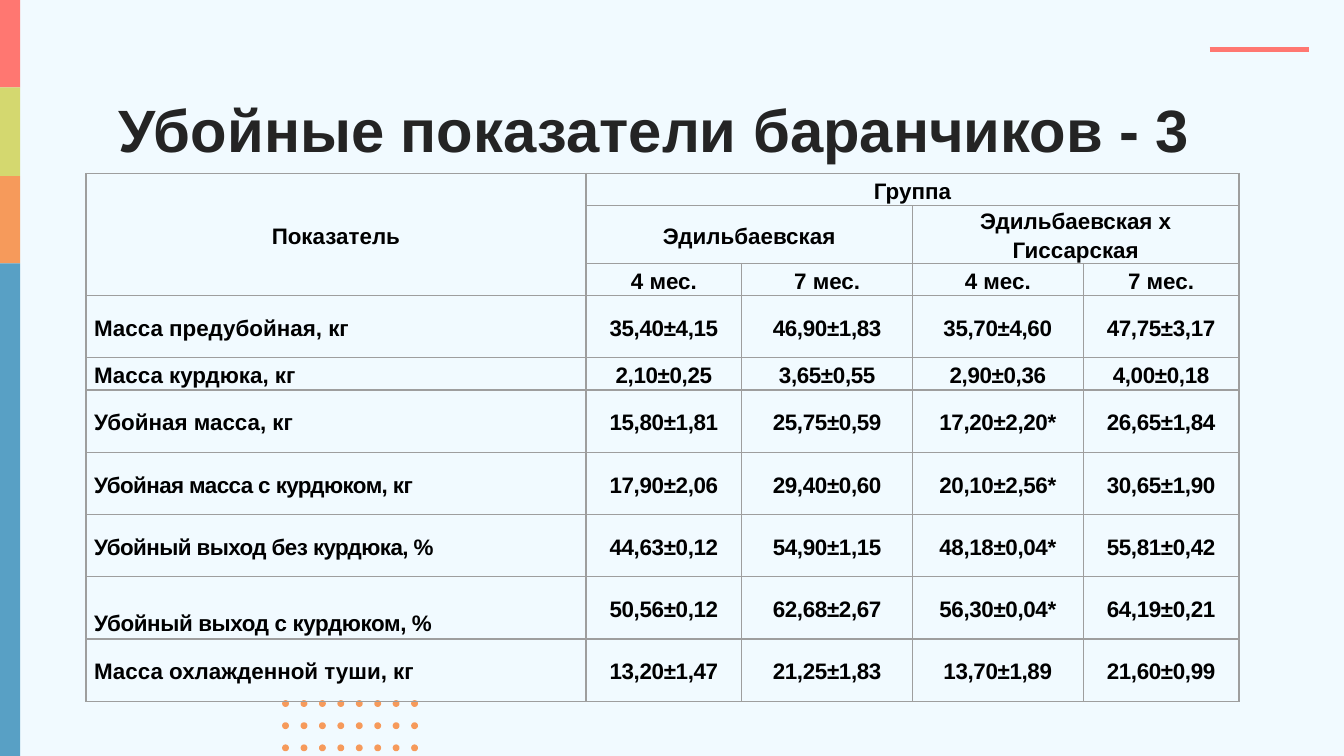
from lxml import etree
from pptx import Presentation
from pptx.dml.color import RGBColor
from pptx.enum.shapes import MSO_CONNECTOR, MSO_SHAPE
from pptx.enum.text import MSO_ANCHOR, MSO_AUTO_SIZE, PP_ALIGN
from pptx.oxml.ns import qn
from pptx.util import Inches, Pt

RECTANGLE, OVAL = MSO_SHAPE.RECTANGLE, MSO_SHAPE.OVAL
STRAIGHT = MSO_CONNECTOR.STRAIGHT
TOP, MIDDLE = MSO_ANCHOR.TOP, MSO_ANCHOR.MIDDLE
LEFT, CENTER = PP_ALIGN.LEFT, PP_ALIGN.CENTER
NO_AUTOFIT = MSO_AUTO_SIZE.NONE

COLORS = {
    "background": "F1FAFF", "coral": "FF7771", "lime": "D4D86F", "orange": "F69A5B",
    "blue": "58A0C5", "title": "242424", "text": "000000", "border": "9E9E9E",
}
TITLE = "Убойные показатели баранчиков - 3"
SIDE_BARS = [("coral", 0.65), ("lime", 0.66), ("orange", 0.65), ("blue", 3.67)]
HEADERS = [
    ["Показатель", "Группа", "", "", ""],
    ["", "Эдильбаевская", "", "Эдильбаевская х Гиссарская", ""],
    ["", "4 мес.", "7 мес.", "4 мес.", "7 мес."],
]
MERGES = [((0, 0), (2, 0)), ((0, 1), (0, 4)), ((1, 1), (1, 2)), ((1, 3), (1, 4))]
INDICATORS = [
    ["Масса предубойная, кг", "35,40±4,15", "46,90±1,83", "35,70±4,60", "47,75±3,17"],
    ["Масса курдюка, кг", "2,10±0,25", "3,65±0,55", "2,90±0,36", "4,00±0,18"],
    ["Убойная масса, кг", "15,80±1,81", "25,75±0,59", "17,20±2,20*", "26,65±1,84"],
    ["Убойная масса с курдюком, кг", "17,90±2,06", "29,40±0,60", "20,10±2,56*", "30,65±1,90"],
    ["Убойный выход без курдюка, %", "44,63±0,12", "54,90±1,15", "48,18±0,04*", "55,81±0,42"],
    ["Убойный выход с курдюком, %", "50,56±0,12", "62,68±2,67", "56,30±0,04*", "64,19±0,21"],
    ["Масса охлажденной туши, кг", "13,20±1,47", "21,25±1,83", "13,70±1,89", "21,60±0,99"],
]
LABEL_SPACING = {
    "Убойная масса с курдюком, кг": -30,
    "Убойный выход без курдюка, %": -30,
    "Убойный выход с курдюком, %": -20,
}
LOWERED_LABEL = "Убойный выход с курдюком, %"
VALUE_SPACING = -20
SLIDE_WIDTH = Inches(10)
SLIDE_HEIGHT = SLIDE_WIDTH * 9 // 16
COLUMN_WIDTHS = [3.72, 1.16, 1.27, 1.27, 1.16]
TABLE_LEFT, TABLE_TOP, TABLE_HEIGHT = 0.64, 1.29, 3.93
SHORT_ROW, TWO_LINE_ROW, TALL_ROW_COUNT = 0.24, 0.43, 6
TALL_ROW = (TABLE_HEIGHT - 3 * SHORT_ROW - TWO_LINE_ROW) / TALL_ROW_COUNT
ROW_HEIGHTS = [SHORT_ROW, TWO_LINE_ROW, SHORT_ROW, TALL_ROW, SHORT_ROW] + [TALL_ROW] * 5
DOT_COLUMNS, DOT_ROWS, DOT_SIZE = 8, 3, 0.03
DOT_LEFT, DOT_RIGHT, DOT_TOP, DOT_BOTTOM = 2.11, 3.07, 5.22, 5.55

TITLE_FRAME = {
    "word_wrap": True, "auto_size": NO_AUTOFIT, "vertical_anchor": TOP,
    "margin_left": Inches(0.1), "margin_right": Inches(0.1),
    "margin_top": Inches(0.1), "margin_bottom": Inches(0.1),
}
CELL_FORMAT = {
    "vertical_anchor": MIDDLE, "margin_left": Inches(0.06),
    "margin_right": Inches(0.06), "margin_top": 0, "margin_bottom": 0,
}
TITLE_FONT = {"name": "Arial", "size": Pt(32), "bold": True}
CELL_FONT = {"name": "Arial", "size": Pt(12), "bold": True}


def color(name):
    """Return the named palette colour."""
    return RGBColor.from_string(COLORS[name])


def apply_format(target, values):
    """Set each named attribute on the target."""
    for name, value in values.items():
        setattr(target, name, value)


def add_filled_shape(slide, preset, left, top, width, height, fill):
    """Add a flat shape in one colour and return it."""
    shape = slide.shapes.add_shape(
        preset, Inches(left), Inches(top), Inches(width), Inches(height))
    shape.shadow.inherit = False
    shape.fill.solid()
    shape.fill.fore_color.rgb = color(fill)
    shape.line.fill.background()
    return shape


def add_decoration(slide):
    """Draw the side bars, the accent line and the dot grid."""
    top = 0
    for fill, height in SIDE_BARS:
        add_filled_shape(slide, RECTANGLE, 0, top, 0.15, height, fill)
        top += height
    accent = slide.shapes.add_connector(
        STRAIGHT, Inches(9), Inches(0.37), Inches(9.74), Inches(0.37))
    accent.line.color.rgb = color("coral")
    accent.line.width = Pt(3)
    etree.SubElement(accent._element.spPr, qn("a:effectLst"))
    column_step = (DOT_RIGHT - DOT_LEFT) / (DOT_COLUMNS - 1)
    row_step = (DOT_BOTTOM - DOT_TOP) / (DOT_ROWS - 1)
    for column in range(DOT_COLUMNS):
        for row in range(DOT_ROWS):
            dot = add_filled_shape(
                slide, OVAL, DOT_LEFT + column * column_step,
                DOT_TOP + row * row_step, DOT_SIZE, DOT_SIZE, "orange")
            dot.line.color.rgb = color("orange")
            dot.line.width = Pt(1.5)


def format_title(title):
    """Place and style the title placeholder."""
    apply_format(title, {"left": Inches(0.78), "top": Inches(0.59),
                         "width": Inches(8.44), "height": Inches(0.63)})
    apply_format(title.text_frame, TITLE_FRAME)
    title.text_frame.text = TITLE
    paragraph = title.text_frame.paragraphs[0]
    paragraph.alignment = LEFT
    apply_format(paragraph.runs[0].font, TITLE_FONT)
    paragraph.runs[0].font.color.rgb = color("title")


def add_borders(cell):
    """Outline a table cell on all four sides."""
    properties = cell._tc.get_or_add_tcPr()
    for side in ("a:lnL", "a:lnR", "a:lnT", "a:lnB"):
        line = etree.SubElement(properties, qn(side), w=str(Pt(0.75)))
        fill = etree.SubElement(line, qn("a:solidFill"))
        etree.SubElement(fill, qn("a:srgbClr"), val=COLORS["border"])


def fill_cell(cell, text, alignment, spacing):
    """Write and style the text of a table cell."""
    paragraph = cell.text_frame.paragraphs[0]
    apply_format(paragraph, {"alignment": alignment, "line_spacing": 1.15})
    run = paragraph.add_run()
    run.text = text
    apply_format(run.font, CELL_FONT)
    run.font.color.rgb = color("text")
    if spacing:
        run._r.get_or_add_rPr().set("spc", str(spacing))


def add_indicator_table(slide):
    """Add the table of slaughter indicators."""
    rows = HEADERS + INDICATORS
    table = slide.shapes.add_table(
        len(rows), len(COLUMN_WIDTHS), Inches(TABLE_LEFT), Inches(TABLE_TOP),
        Inches(sum(COLUMN_WIDTHS)), Inches(TABLE_HEIGHT)).table
    apply_format(table, {"first_row": False, "horz_banding": False})
    for column, width in zip(table.columns, COLUMN_WIDTHS):
        column.width = Inches(width)
    for row, height in zip(table.rows, ROW_HEIGHTS):
        row.height = Inches(height)
    for row_index, texts in enumerate(rows):
        is_header = row_index < len(HEADERS)
        for column_index, text in enumerate(texts):
            cell = table.cell(row_index, column_index)
            apply_format(cell, CELL_FORMAT)
            add_borders(cell)
            cell.fill.background()
            is_label = column_index == 0 and not is_header
            spacing = 0 if is_header else VALUE_SPACING
            if is_label:
                spacing = LABEL_SPACING.get(text, 0)
            if text == LOWERED_LABEL:
                cell.margin_top = Inches(0.21)
            fill_cell(cell, text, LEFT if is_label else CENTER, spacing)
    for first, last in MERGES:
        table.cell(*first).merge(table.cell(*last))


def main():
    """Build and save the slide."""
    presentation = Presentation()
    presentation.slide_width = SLIDE_WIDTH
    presentation.slide_height = SLIDE_HEIGHT
    slide = presentation.slides.add_slide(presentation.slide_layouts[5])
    slide.background.fill.solid()
    slide.background.fill.fore_color.rgb = color("background")
    add_decoration(slide)
    format_title(slide.shapes.title)
    add_indicator_table(slide)
    presentation.save("out.pptx")


if __name__ == "__main__":
    main()
